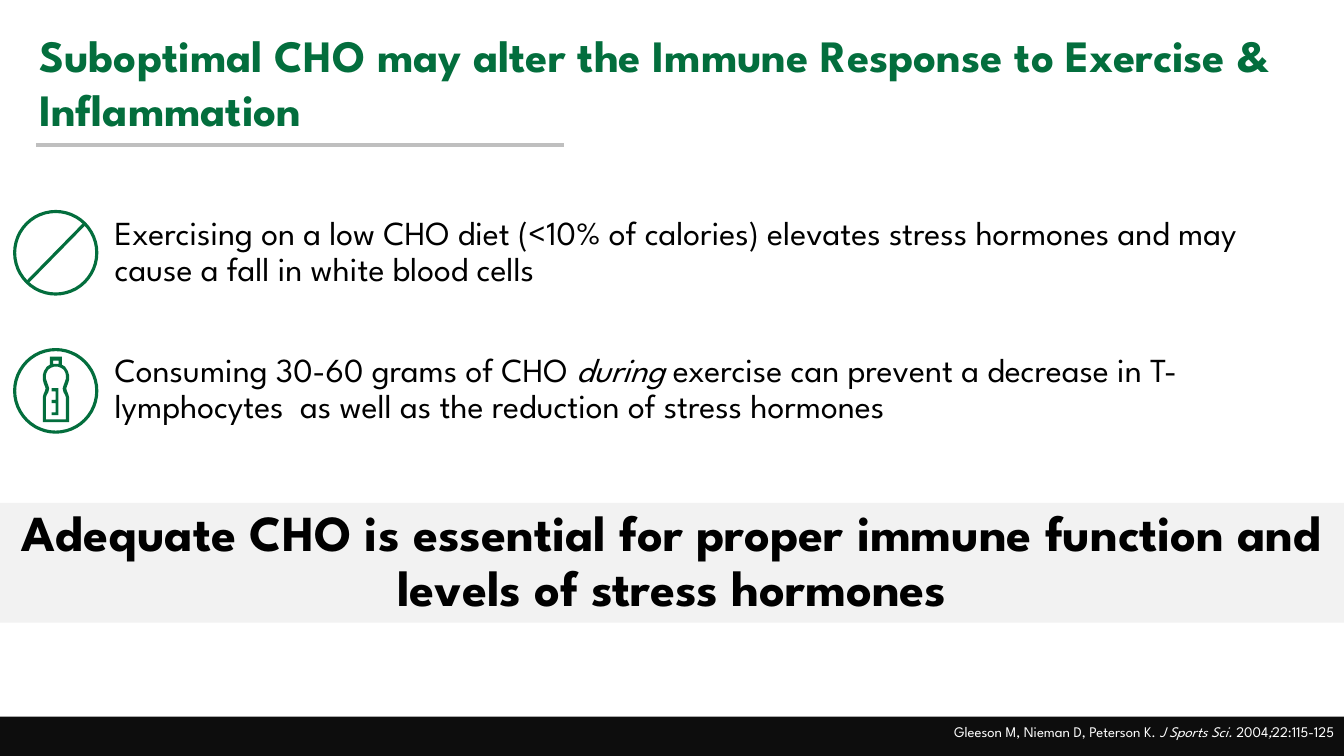
"""Build a slide on carbohydrate intake and the immune response to exercise."""
from lxml import etree
from pptx import Presentation
from pptx import util as u
from pptx.dml.color import RGBColor
from pptx.enum import shapes, text
from pptx.oxml.ns import qn

FONT = "League Spartan"
COLORS = {"green": "036E3D", "black": "000000", "white": "FFFFFF",
          "band": "F2F2F2", "footer": "0D0D0D", "rule": "BFBFBF"}
SLIDE_WIDTH, SLIDE_HEIGHT = 33.87, 19.05

BOTTLE_AXIS = 141
BOTTLE_OUTSIDE = [(15, 899), (15, 919), (23, 924), (30, 935), (33, 945), (33, 957),
                  (31, 965), (28, 973), (26, 979), (28, 986), (31, 993), (33, 1001),
                  (33, 1064)]
BOTTLE_INSIDE = [(5, 924), (13, 927), (20, 932), (24, 940), (25, 945), (25, 955),
                 (22, 964), (19, 972), (17, 979), (19, 988), (23, 995), (25, 1001),
                 (25, 1057)]
BOTTLE_NECK = [(7, 909), (7, 917)]
BOTTLE_SCALE = [(147, 978), (130, 978), (130, 986), (140, 986), (140, 1008),
                (130, 1008), (130, 1016), (140, 1016), (140, 1039), (130, 1039),
                (130, 1046), (147, 1046)]


def color(name):
    return RGBColor.from_string(COLORS[name])


def cm(*lengths):
    return [u.Cm(length) for length in lengths]


def write(frame, paragraphs, size, ink, bold=None, align=text.PP_ALIGN.LEFT,
          spacing=1.0, gaps=(0,)):
    """Fill a text frame; each paragraph is a list of (words, italic) runs."""
    frame.word_wrap = True
    for index, (runs, gap) in enumerate(zip(paragraphs, gaps)):
        paragraph = frame.add_paragraph() if index else frame.paragraphs[0]
        paragraph.alignment = align
        paragraph.line_spacing = spacing
        paragraph.space_before = u.Pt(gap)
        paragraph.font.name = FONT
        paragraph.font.size = u.Pt(size)
        paragraph.font.bold = bold
        paragraph.font.color.rgb = color(ink)
        for words, italic in runs:
            run = paragraph.add_run()
            run.text = words
            if italic:
                run.font.italic = True


def add_title(slide, words):
    title = slide.shapes.title
    title.left, title.top, title.width, title.height = cm(0.74, 0.58, 32.18, 3)
    title.text_frame.vertical_anchor = text.MSO_ANCHOR.TOP
    title.text_frame.auto_size = text.MSO_AUTO_SIZE.NONE
    write(title.text_frame, [[(words, False)]], 32, "green", bold=True)


def add_textbox(slide, box, *content, **style):
    frame = slide.shapes.add_textbox(*cm(*box)).text_frame
    write(frame, *content, **style)


def add_band(slide, top, height, fill):
    band = slide.shapes.add_shape(shapes.MSO_SHAPE.RECTANGLE,
                                  *cm(0, top, SLIDE_WIDTH, height))
    band.shadow.inherit = False
    band.fill.solid()
    band.fill.fore_color.rgb = color(fill)
    band.line.fill.background()
    return band


def add_ring(slide, top):
    ring = slide.shapes.add_shape(shapes.MSO_SHAPE.OVAL, *cm(0.37, top, 2.07, 2.08))
    ring.shadow.inherit = False
    ring.fill.background()
    ring.line.color.rgb = color("green")
    ring.line.width = u.Pt(2.25)


def add_line(slide, ends, ink, width):
    line = slide.shapes.add_connector(shapes.MSO_CONNECTOR.STRAIGHT, *cm(*ends))
    line.line.color.rgb = color(ink)
    line.line.width = u.Pt(width)
    etree.SubElement(line._element.spPr, qn("a:effectLst"))


def add_outline(group, contours):
    """Draw closed contours, in hundredths of a centimetre, as one green shape."""
    builder = group.shapes.build_freeform(*contours[0][0], scale=u.Cm(0.01))
    for index, contour in enumerate(contours):
        if index:
            builder.move_to(*contour[0])
        builder.add_line_segments(contour[1:], close=True)
    outline = builder.convert_to_shape()
    outline.shadow.inherit = False
    outline.fill.solid()
    outline.fill.fore_color.rgb = color("green")
    outline.line.fill.background()


def mirrored(profile):
    """Turn half-widths down one side into a contour around the bottle axis."""
    right = [(BOTTLE_AXIS + half, y) for half, y in profile]
    left = [(BOTTLE_AXIS - half, y) for half, y in reversed(profile)]
    return right + left


def add_bottle(slide):
    bottle = slide.shapes.add_group_shape()
    add_outline(bottle, [BOTTLE_SCALE])
    add_outline(bottle, [mirrored(profile) for profile in
                         (BOTTLE_OUTSIDE, BOTTLE_INSIDE, BOTTLE_NECK)])


def main():
    deck = Presentation()
    deck.slide_width, deck.slide_height = cm(SLIDE_WIDTH, SLIDE_HEIGHT)
    slide = deck.slides.add_slide(deck.slide_layouts[5])

    add_title(slide, "Suboptimal CHO may alter the Immune Response to "
                     "Exercise & Inflammation")
    add_line(slide, (0.91, 3.66, 14.22, 3.66), "rule", 3)

    findings = [
        [("Exercising on a low CHO diet (<10% of calories) elevates stress hormones "
          "and may cause a fall in white blood cells", False)],
        [("Consuming 30-60 grams of CHO ", False), ("during ", True),
         ("exercise can prevent a decrease in T-lymphocytes  as well as the "
          "reduction of stress hormones", False)]]
    add_textbox(slide, (2.64, 5.33, 30.76, 5.59), findings, 24, "black",
                spacing=0.9, gaps=(10, 46))

    takeaway = add_band(slide, 12.67, 3.02, "band")
    write(takeaway.text_frame,
          [[("Adequate CHO is essential for proper immune function and levels of "
             "stress hormones", False)]],
          36, "black", bold=True, align=text.PP_ALIGN.CENTER, spacing=0.9, gaps=(10,))

    add_bottle(slide)
    for top in (5.33, 8.81):
        add_ring(slide, top)
    add_line(slide, (0.69, 7.11, 2.13, 5.64), "green", 2.25)

    add_band(slide, 18.06, 0.99, "footer")
    citation = [("Gleeson M, Nieman D, Peterson K. ", False), ("J Sports Sci. ", True),
                ("2004", False), (";", True), ("22:115-125", False)]
    add_textbox(slide, (10.8, 18.08, 23.07, 0.97), [citation], 10.5, "white",
                align=text.PP_ALIGN.RIGHT)

    deck.save("out.pptx")


if __name__ == "__main__":
    main()
